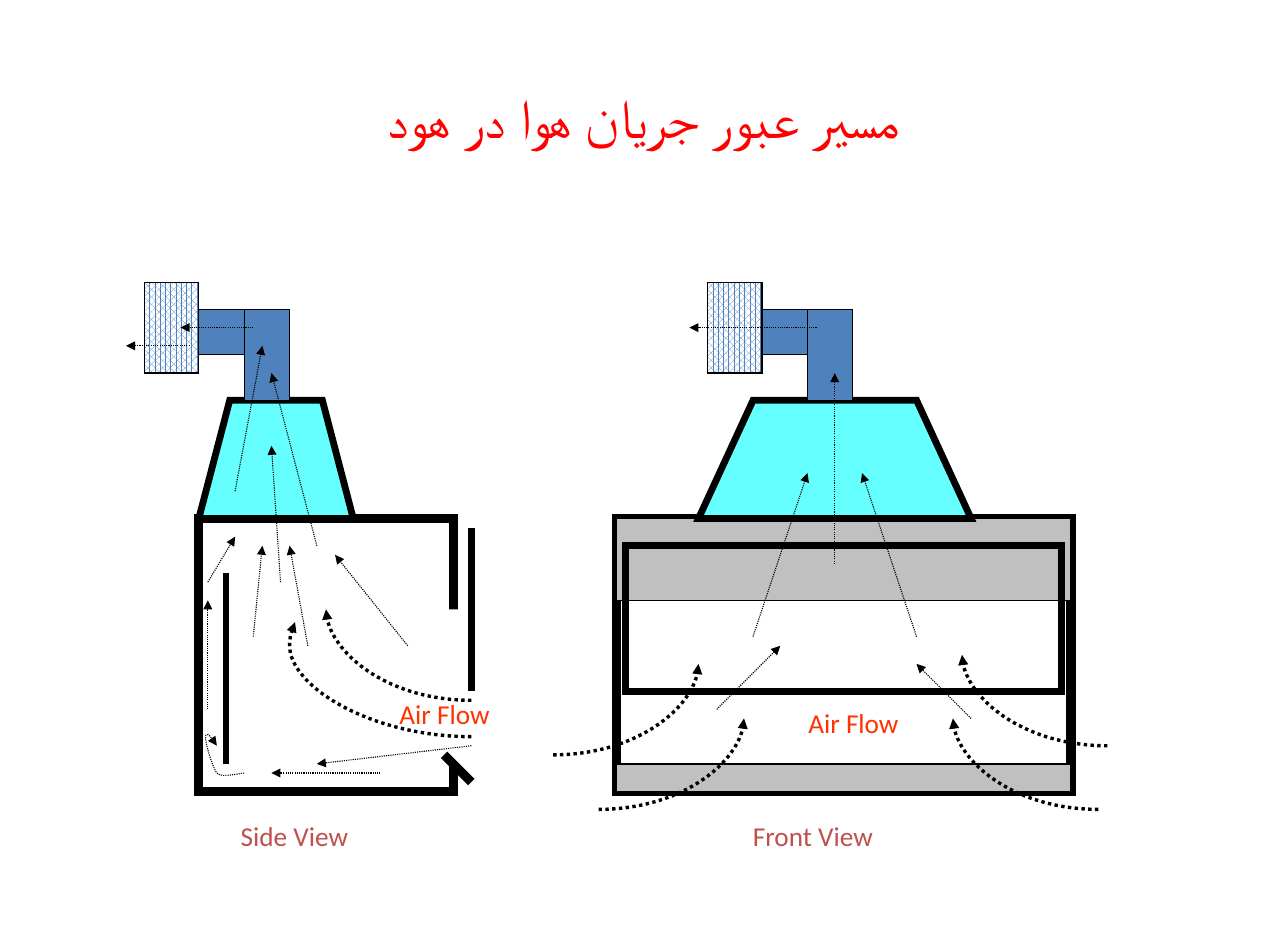
from dataclasses import dataclass
from typing import Optional

from lxml import etree
from pptx import Presentation, util as u
from pptx.dml import color
from pptx.enum import dml, shapes, text
from pptx.oxml import ns


@dataclass(frozen=True)
class Theme:
    font: str = "Calibri"
    head: int = 36
    note: int = 18
    red: str = "FF0000"
    flow: str = "FF3300"
    view: str = "C0504D"
    ink: str = "000000"
    paper: str = "FFFFFF"
    duct: str = "4F81BD"
    hood: str = "66FFFF"
    panel: str = "C0C0C0"
    thin: float = 0.75
    bold: float = 4.5
    wall: float = 6
    dots: float = 2.25


T = Theme()
STEP, LEFT, TOP = 6, 131.25, 186.25
HOOD = shapes.MSO_SHAPE.FLOWCHART_MANUAL_OPERATION


@dataclass(frozen=True)
class Block:
    col: float
    row: float
    wide: float
    high: float
    fill: Optional[str] = None
    line: float = T.thin
    kind: shapes.MSO_SHAPE = shapes.MSO_SHAPE.RECTANGLE
    turn: int = 0
    mesh: bool = False


@dataclass(frozen=True)
class Stroke:
    start: tuple
    end: tuple
    line: float = T.thin
    flow: bool = True


@dataclass(frozen=True)
class Curve:
    nodes: list
    line: float = T.dots


@dataclass(frozen=True)
class Label:
    words: str
    left: float
    top: float
    wide: float
    tint: str


def across(col: float) -> int:
    return u.Pt(LEFT + STEP * col)


def down(row: float) -> int:
    return u.Pt(TOP + STEP * row)


def apply(item, style: dict) -> None:
    for name, value in style.items():
        setattr(item, name, value)


def rgb(tint: str) -> color.RGBColor:
    return color.RGBColor.from_string(tint)


def ink(item, width: float, flow: bool) -> None:
    line = item.line
    line.fill.solid()
    line.color.rgb = rgb(T.ink)
    line.width = u.Pt(width)
    if flow:
        line.dash_style = dml.MSO_LINE.ROUND_DOT
    edge = item._element.spPr.find(ns.qn("a:ln"))
    etree.SubElement(edge, ns.qn("a:miter"), lim="800000")
    if flow:
        etree.SubElement(edge, ns.qn("a:tailEnd"), type="triangle")


def draw_block(page, b: Block) -> None:
    item = page.shapes.add_shape(b.kind, across(b.col), down(b.row),
                                 u.Pt(STEP * b.wide), u.Pt(STEP * b.high))
    item.shadow.inherit = False
    item.rotation = b.turn
    if b.mesh:
        item.fill.patterned()
        item.fill.pattern = dml.MSO_PATTERN.PERCENT_70
        item.fill.fore_color.rgb = rgb(T.duct)
        item.fill.back_color.rgb = rgb(T.paper)
    elif b.fill:
        item.fill.solid()
        item.fill.fore_color.rgb = rgb(b.fill)
    else:
        item.fill.background()
    if b.line:
        ink(item, b.line, False)
    else:
        item.line.fill.background()


def draw_stroke(page, s: Stroke) -> None:
    (x, y), (far, low) = s.start, s.end
    item = page.shapes.add_connector(shapes.MSO_CONNECTOR.STRAIGHT, across(x), down(y),
                                     across(far), down(low))
    ink(item, s.line, s.flow)
    etree.SubElement(item._element.spPr, ns.qn("a:effectLst"))


def draw_curve(page, c: Curve) -> None:
    spots = [(across(x), down(y)) for x, y in c.nodes]
    pen = page.shapes.build_freeform(*spots[0])
    pen.add_line_segments(spots[1:], close=False)
    item = pen.convert_to_shape()
    legs = list(item._element.iter(ns.qn("a:lnTo")))
    for first in range(0, len(legs), 3):
        bend = etree.Element(ns.qn("a:cubicBezTo"))
        legs[first].addprevious(bend)
        for leg in legs[first:first + 3]:
            bend.append(leg[0])
            leg.getparent().remove(leg)
    item.shadow.inherit = False
    item.fill.background()
    ink(item, c.line, True)


def arc(start: tuple, end: tuple) -> list:
    (x, y), (far, low) = start, end
    bend = 0.55
    return [start, (x + bend * (far - x), y), (far, low + (1 - bend) * (y - low)), end]


def write(frame, words: str, size: int, tint: str, align: text.PP_ALIGN) -> None:
    line = frame.paragraphs[0]
    line.alignment = align
    line._p.get_or_add_pPr().set("rtl", "1")
    run = line.add_run()
    run.text = words
    apply(run.font, {"name": T.font, "size": u.Pt(size)})
    run.font.color.rgb = rgb(tint)


def draw_label(page, n: Label) -> None:
    box = page.shapes.add_textbox(u.Pt(n.left), u.Pt(n.top), u.Pt(n.wide), u.Pt(29))
    apply(box.text_frame, {"word_wrap": False, "auto_size": text.MSO_AUTO_SIZE.SHAPE_TO_FIT_TEXT})
    write(box.text_frame, n.words, T.note, n.tint, text.PP_ALIGN.RIGHT)


def unit(col: int) -> list:
    return [Block(col, 3, 5, 5, T.duct), Block(col + 5, 3, 5, 10, T.duct),
            Block(col - 6, 0, 6, 10, mesh=True)]


BLOCKS = [
    Block(0, 26, 28, 30, line=T.wall),
    Block(46, 26, 50, 30, line=T.wall),
    Block(23, 36, 9, 17, T.paper, 0),
    Block(46, 26, 50, 9, T.panel),
    Block(47, 29, 48, 16, line=T.bold),
    Block(0, 13, 17, 13, T.hood, T.bold, HOOD, 180),
    Block(55, 13, 30, 13, T.hood, T.bold, HOOD, 180),
    Block(46, 53, 50, 3, T.panel),
    *unit(0), *unit(62),
]
BARS = [Stroke((30, 27), (30, 45), T.bold, False),
        Stroke((27, 52), (30, 55), T.wall, False),
        Stroke((3, 32), (3, 53), T.bold, False)]
CURVES = [
    Curve(arc((30, 46), (14, 36))),
    Curve(arc((30, 50), (10, 40)) + [(10, 39.2), (10.2, 38.3), (10.6, 37.4)]),
    Curve([(5, 54), (3.7, 54.2), (2.5, 54.5), (2, 54), (1.5, 53.5), (-0.5, 47.1), (2, 51)], T.thin),
    Curve(arc((100, 51), (84, 41))),
    Curve(arc((99, 58), (83, 48))),
    Curve(arc((39, 52), (55, 42))),
    Curve(arc((44, 58), (60, 48))),
]
FLOWS = [Stroke(*ends) for ends in (
    ((30, 51), (13, 53)), ((20, 54), (8, 54)), ((1, 33), (4, 28)), ((12, 40), (10, 29)),
    ((23, 40), (15, 30)), ((6, 39), (7, 29)), ((1, 47), (1, 35)), ((9, 33), (8, 18)),
    ((13, 29), (8, 10)), ((4, 23), (7, 7)), ((61, 39), (67, 21)), ((79, 39), (73, 21)),
    ((70, 31), (70, 10)), ((85, 48), (79, 42)), ((57, 47), (64, 40)),
    ((6, 5), (-2, 5)), ((-1, 7), (-8, 7)), ((68, 5), (54, 5)))]
LABELS = [Label("Air Flow", 255.5, 456.5, 75, T.flow), Label("Air Flow", 525.5, 462.5, 75, T.flow),
          Label("Side View", 150.5, 537.5, 86.5, T.view), Label("Front View", 486.5, 537.5, 97, T.view)]


def main() -> None:
    deck = Presentation()
    deck.slide_width = u.Pt(850.5)
    deck.slide_height = u.Pt(623.75)
    page = deck.slides.add_slide(deck.slide_layouts[5])
    title = page.shapes.title
    apply(title, {"left": u.Pt(42.5), "top": u.Pt(25), "width": u.Pt(765.5), "height": u.Pt(104)})
    title.text_frame.vertical_anchor = text.MSO_ANCHOR.MIDDLE
    write(title.text_frame, "مسير عبور جريان هوا در هود", T.head, T.red, text.PP_ALIGN.CENTER)
    for draw, items in ((draw_block, BLOCKS), (draw_stroke, BARS), (draw_curve, CURVES),
                        (draw_stroke, FLOWS), (draw_label, LABELS)):
        for item in items:
            draw(page, item)
    deck.save("out.pptx")


if __name__ == "__main__":
    main()
